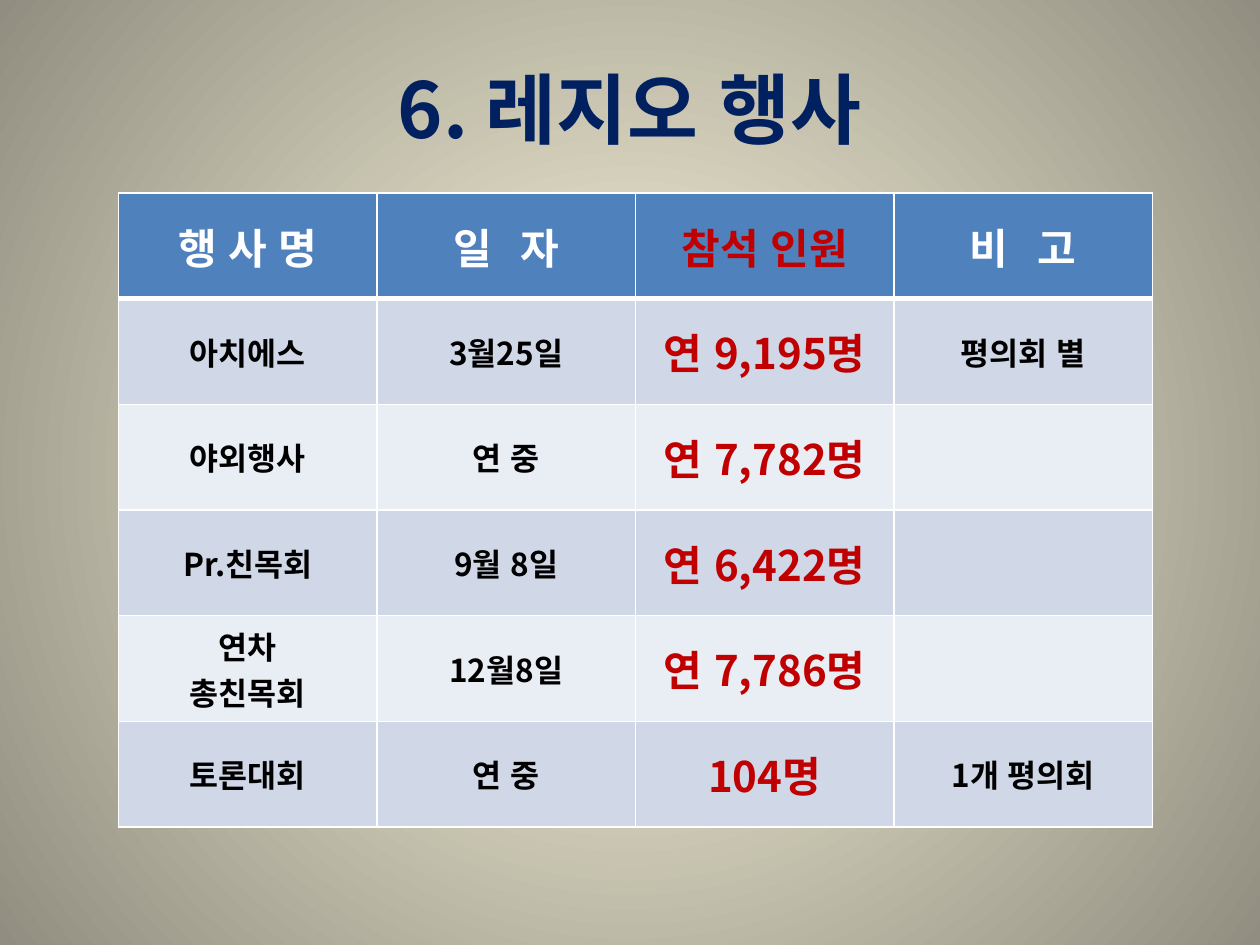
from pptx import Presentation
from pptx.dml.color import RGBColor
from pptx.enum.lang import MSO_LANGUAGE_ID as Lang
from pptx.enum.text import MSO_ANCHOR as Anchor, PP_ALIGN as Align
from pptx.oxml import parse_xml
from pptx.oxml.ns import nsdecls, qn
from pptx.util import Cm, Pt

TITLE = "6. 레지오 행사"
HEADERS = ["행 사 명", "일 자", "참석 인원", "비 고"]
EVENTS = [
    ("아치에스", "3월25일", "연 9,195명", "평의회 별"),
    ("야외행사", "연 중", "연 7,782명", ""),
    ("Pr.친목회", "9월 8일", "연 6,422명", ""),
    ("연차\n총친목회", "12월8일", "연 7,786명", ""),
    ("토론대회", "연 중", "104명", "1개 평의회"),
]
ATTENDANCE = HEADERS.index("참석 인원")
WIDE_HEADERS = ("일 자", "비 고")

THEME = {
    "font": "Noto Sans CJK KR",
    "title_size": 44, "large": 24, "body": 18,
    "navy": "002060", "red": "C00000", "white": "FFFFFF", "black": "000000",
    "header": "4F81BD", "bands": ("D0D8E8", "E9EDF4"),
    "glow": "FCF7DD", "edge": "918E81",
}
COLUMN_WIDTH, ROW_HEIGHT = Cm(5.21), Cm(2.13)


def rgb(name):
    return RGBColor.from_string(THEME.get(name, name))


def write(frame, text, size, color, tracking=0):
    frame.vertical_anchor = Anchor.MIDDLE
    for number, line in enumerate(text.split("\n")):
        paragraph = frame.add_paragraph() if number else frame.paragraphs[0]
        paragraph.alignment = Align.CENTER
        run = paragraph.add_run()
        run.text = line
        font = run.font
        font.name, font.size, font.bold = THEME["font"], Pt(THEME[size]), True
        font.color.rgb = rgb(color)
        font.language_id = Lang.KOREAN
        properties = run._r.get_or_add_rPr()
        properties.find(qn("a:latin")).addnext(
            parse_xml(f'<a:ea {nsdecls("a")} typeface="{THEME["font"]}"/>'))
        if tracking:
            properties.set("spc", str(tracking * 100))


def style_cell(cell, fill, bottom):
    properties = cell._tc.get_or_add_tcPr()
    for side, width in (("L", 1), ("R", 1), ("T", 1), ("B", bottom)):
        properties.append(parse_xml(
            f'<a:ln{side} {nsdecls("a")} w="{Pt(width)}"><a:solidFill>'
            f'<a:srgbClr val="{THEME["white"]}"/></a:solidFill></a:ln{side}>'))
    cell.fill.solid()
    cell.fill.fore_color.rgb = rgb(fill)
    cell.vertical_anchor = Anchor.MIDDLE


def paint_background(slide):
    fill = slide.background.fill
    fill.gradient()
    for stop, color in zip(fill.gradient_stops, ("glow", "edge")):
        stop.color.rgb = rgb(color)
    linear = slide.element.find(".//" + qn("a:lin"))
    linear.getparent().replace(linear, parse_xml(
        f'<a:path {nsdecls("a")} path="circle">'
        '<a:fillToRect l="50000" t="50000" r="50000" b="50000"/></a:path>'))


def add_events(slide):
    rows = [HEADERS, *EVENTS]
    table = slide.shapes.add_table(
        len(rows), len(HEADERS), Cm(2.39), Cm(3.89),
        COLUMN_WIDTH * len(HEADERS), ROW_HEIGHT * len(rows)).table
    for column in table.columns:
        column.width = COLUMN_WIDTH
    for r, row in enumerate(rows):
        table.rows[r].height = ROW_HEIGHT
        is_header = r == 0
        for c, text in enumerate(row):
            cell = table.cell(r, c)
            style_cell(cell, "header" if is_header else THEME["bands"][(r - 1) % 2],
                       bottom=3 if is_header else 1)
            if not text:
                continue
            counted = c == ATTENDANCE
            write(cell.text_frame, text,
                  size="large" if is_header or counted else "body",
                  color="red" if counted else "white" if is_header else "black",
                  tracking=5 if text in WIDE_HEADERS else 0)


def main():
    deck = Presentation()
    deck.slide_width, deck.slide_height = Cm(25.4), Cm(19.05)
    slide = deck.slides.add_slide(deck.slide_layouts[5])
    paint_background(slide)
    title = slide.shapes.title
    title.left, title.top, title.width, title.height = (
        Cm(1.27), Cm(0.76), Cm(22.86), Cm(2.82))
    write(title.text_frame, TITLE, size="title_size", color="navy")
    add_events(slide)
    deck.save("out.pptx")


if __name__ == "__main__":
    main()
